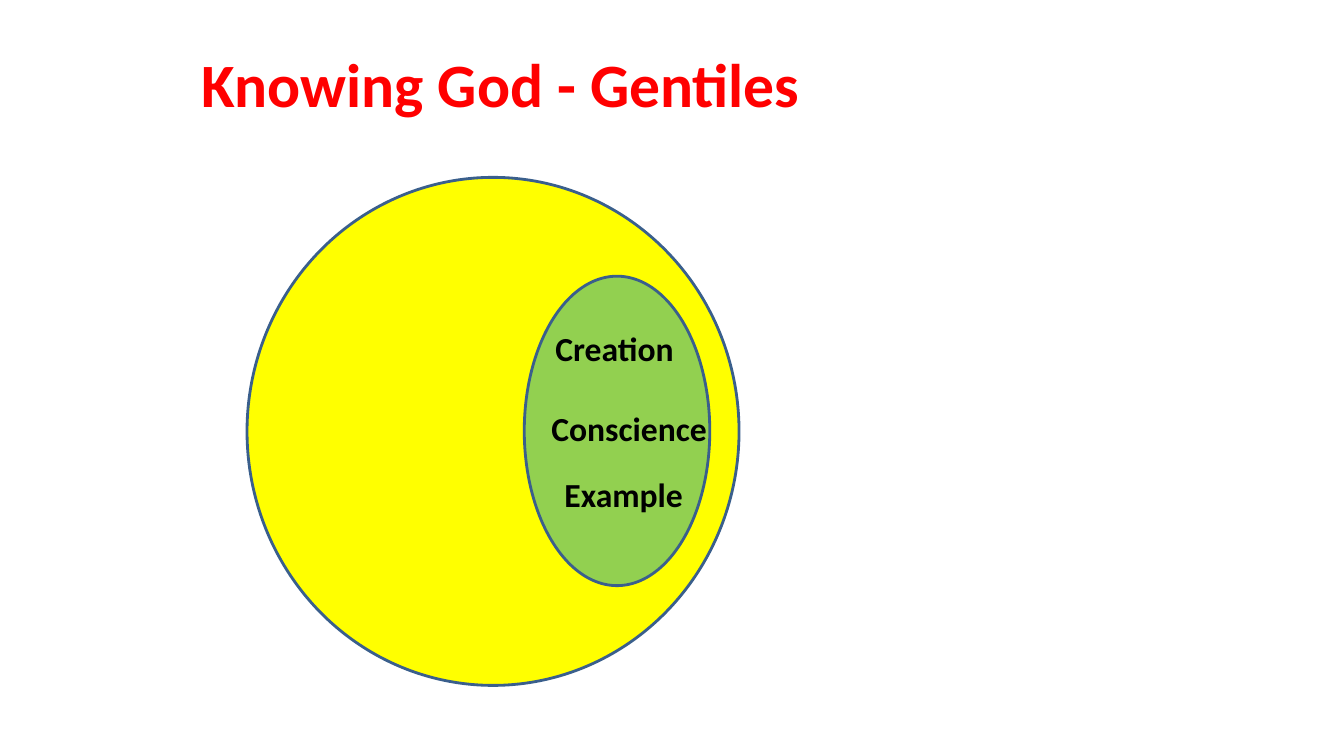
"""Build the slide on how Gentiles know God: a small ellipse inside a large one."""
from pptx import Presentation
from pptx.dml.color import RGBColor
from pptx.enum.shapes import MSO_SHAPE as Shape
from pptx.enum.text import MSO_ANCHOR as Anchor, PP_ALIGN as Align
from pptx.util import Pt

PX = 9144
COLORS = {"title": "FF0000", "world": "FFFF00", "knowledge": "92D050",
          "outline": "3A5F8C", "label": "000000"}


def place(box, *lengths):
    box.left, box.top, box.width, box.height = (length * PX for length in lengths)


def write(box, text, size, color, align):
    para = box.text_frame.paragraphs[0]
    para.alignment = align
    span = para.add_run()
    span.text = text
    span.font.color.rgb = RGBColor.from_string(COLORS[color])
    for name, value in {"name": "Calibri", "size": Pt(size), "bold": True}.items():
        setattr(span.font, name, value)


deck = Presentation()
deck.slide_width, deck.slide_height = 1333 * PX, 750 * PX
page = deck.slides.add_slide(deck.slide_layouts[5])

title = page.shapes.title
place(title, -103, 20, 1200, 125)
title.text_frame.vertical_anchor = Anchor.MIDDLE
write(title, "Knowing God - Gentiles", 44, "title", Align.CENTER)

for color, frame in {"world": (245, 176, 488, 504),
                     "knowledge": (520, 274, 184, 307)}.items():
    ellipse = page.shapes.add_shape(Shape.OVAL, 0, 0, 0, 0)
    place(ellipse, *frame)
    ellipse.shadow.inherit = False
    ellipse.fill.solid()
    ellipse.fill.fore_color.rgb = RGBColor.from_string(COLORS[color])
    ellipse.line.color.rgb = RGBColor.from_string(COLORS["outline"])
    ellipse.line.width = Pt(2)

for text, left, top, width in [("Creation", 541, 320, 142),
                               ("Conscience", 537, 400, 181),
                               ("Example", 550, 465, 142)]:
    label = page.shapes.add_textbox(0, 0, 0, 0)
    place(label, left, top, width, 50)
    label.text_frame.word_wrap = True
    write(label, text, 24, "label", Align.LEFT)

deck.save("out.pptx")
